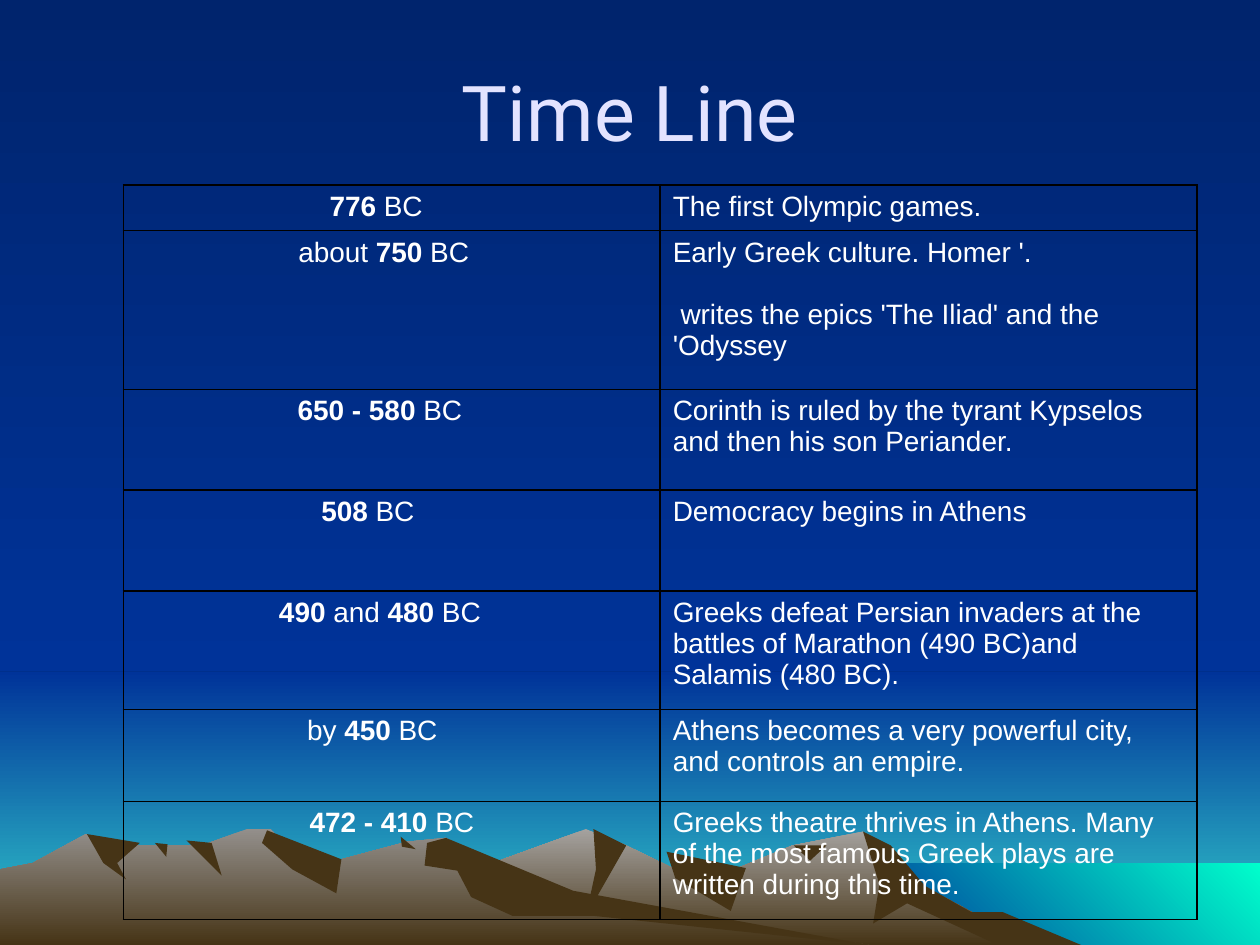
from typing import NamedTuple

from lxml.etree import SubElement
from pptx import Presentation
from pptx.dml.color import RGBColor
from pptx.enum.shapes import MSO_SHAPE as SHAPE
from pptx.enum.text import MSO_ANCHOR as ANCHOR, PP_ALIGN as ALIGN
from pptx.oxml.ns import qn
from pptx.util import Inches, Pt

NIGHT = RGBColor(0x00, 0x24, 0x6D)
BLUE = RGBColor(0x00, 0x33, 0x99)
TEAL = RGBColor(0x33, 0xCC, 0xCC)
AQUA = RGBColor(0x00, 0xFF, 0xCC)
STONE = RGBColor(0xA5, 0xA2, 0x9F)
GRAY = RGBColor(0x93, 0x8F, 0x8B)
BROWN = RGBColor(0x46, 0x34, 0x16)
LAVENDER = RGBColor(0xE3, 0xE3, 0xFF)
WHITE = RGBColor(0xFF, 0xFF, 0xFF)
BLACK = RGBColor(0x00, 0x00, 0x00)
DOWN, UP_RIGHT = 270, 45
HUNDREDTH = Inches(0.01)


class Band(NamedTuple):
    left: float
    top: float
    width: float
    height: float
    start: RGBColor
    end: RGBColor
    angle: int = DOWN


class Ridge(NamedTuple):
    points: list
    top_color: RGBColor = BROWN


class Event(NamedTuple):
    height: float
    date: list
    paragraphs: list
    shift: float = 0


BANDS = [
    Band(0, 5.33, 10, 2.17, BLUE, TEAL),
    Band(0, 0, 10, 5.33, NIGHT, BLUE),
    Band(6.83, 6.85, 3.17, 0.65, BLUE, AQUA, UP_RIGHT),
]

RIDGES = [
    Ridge([(258, 750), (355, 698), (465, 658), (497, 671), (536, 690), (566, 697),
           (629, 671), (685, 660), (723, 698), (820, 750)], STONE),
    Ridge([(685, 660), (698, 702), (693, 733), (720, 717), (792, 750), (858, 750),
           (796, 724), (771, 724), (734, 703), (707, 671)]),
    Ridge([(471, 658), (473, 690), (465, 727), (497, 671)]),
    Ridge([(529, 676), (536, 697), (580, 723), (592, 689)]),
    Ridge([(630, 671), (643, 683), (656, 671)]),
    Ridge([(0, 750), (0, 690), (26, 685), (68, 662), (94, 671), (160, 671), (196, 658),
           (215, 658), (236, 681), (271, 682), (323, 668), (354, 665), (432, 712),
           (690, 750)], GRAY),
    Ridge([(212, 659), (208, 669), (232, 690), (267, 709), (271, 682)]),
    Ridge([(354, 665), (339, 669), (337, 687), (363, 691), (374, 712), (407, 727),
           (472, 727), (690, 750), (455, 707)]),
    Ridge([(318, 664), (319, 672), (330, 674)]),
    Ridge([(148, 667), (176, 695), (168, 669)]),
    Ridge([(123, 669), (132, 680), (133, 670)]),
    Ridge([(69, 662), (82, 685), (100, 698), (93, 685), (111, 669)]),
]

EVENTS = [
    Event(0.36, [("776", True), (" BC", False)], ["The first Olympic games."], 0.25),
    Event(1.26, [("about ", False), ("750", True), (" BC", False)],
          ["Early Greek culture. Homer '.",
           " writes the epics 'The Iliad' and the 'Odyssey"], 0.13),
    Event(0.8, [("650 - 580", True), (" BC", False)],
          ["Corinth is ruled by the tyrant Kypselos and then his son Periander."], 0.19),
    Event(0.8, [("508", True), (" BC", False)], ["Democracy begins in Athens"], 0.38),
    Event(0.94, [("490", True), (" and ", False), ("480", True), (" BC", False)],
          ["Greeks defeat Persian invaders at the battles of Marathon (490 BC)and "
           "Salamis (480 BC)."], 0.19),
    Event(0.73, [("by ", False), ("450", True), (" BC", False)],
          ["Athens becomes a very powerful city, and controls an empire."], 0.31),
    Event(0.94, [("472 - 410", True), (" BC", False)],
          ["Greeks theatre thrives in Athens. Many of the most famous Greek plays are "
           "written during this time."]),
]


def set_gradient(fill, start: RGBColor, end: RGBColor, angle: int = DOWN) -> None:
    fill.gradient()
    fill.gradient_angle = angle
    for stop, color in zip(fill.gradient_stops, (start, end)):
        stop.color.rgb = color


def draw_band(s, band: Band) -> None:
    sp = s.shapes.add_shape(SHAPE.RECTANGLE, *(Inches(v) for v in band[:4]))
    sp.shadow.inherit = False
    sp.line.fill.background()
    set_gradient(sp.fill, band.start, band.end, band.angle)


def draw_ridge(s, ridge: Ridge) -> None:
    builder = s.shapes.build_freeform(*ridge.points[0], scale=HUNDREDTH)
    builder.add_line_segments(ridge.points[1:], close=True)
    sp = builder.convert_to_shape()
    sp.shadow.inherit = False
    sp.line.fill.background()
    if ridge.top_color == BROWN:
        sp.fill.solid()
        sp.fill.fore_color.rgb = BROWN
    else:
        set_gradient(sp.fill, ridge.top_color, BROWN)


def add_run(p, text: str, *, font: str = "Arial", size: int = 16,
            color: RGBColor = WHITE, bold: bool = False) -> None:
    r = p.add_run()
    r.text = text
    r.font.name = font
    r.font.size = Pt(size)
    r.font.color.rgb = color
    r.font.bold = bold


def format_cell(cell) -> None:
    tc_pr = cell._tc.get_or_add_tcPr()
    for side in ("a:lnL", "a:lnR", "a:lnT", "a:lnB"):
        ln = SubElement(tc_pr, qn(side), w=str(Pt(1)))
        fill = SubElement(ln, qn("a:solidFill"))
        SubElement(fill, qn("a:srgbClr"), val=str(BLACK))
    cell.fill.background()


def draw_timeline(s, events: list) -> None:
    height = sum(event.height for event in events)
    table = s.shapes.add_table(len(events), 2, Inches(0.98), Inches(1.47),
                               Inches(8.52), Inches(height)).table
    table.first_row = False
    table.horz_banding = False
    for row, event in zip(table.rows, events):
        row.height = Inches(event.height)
        date, story = row.cells
        format_cell(date)
        format_cell(story)
        date.margin_right = Inches(0.1 + event.shift)
        p = date.text_frame.paragraphs[0]
        p.alignment = ALIGN.CENTER
        for text, bold in event.date:
            add_run(p, text, bold=bold)
        tf = story.text_frame
        for i, text in enumerate(event.paragraphs):
            p = tf.add_paragraph() if i else tf.paragraphs[0]
            if i:
                p.space_before = Pt(18)
            add_run(p, text)


def draw_title(s, text: str) -> None:
    title = s.shapes.title
    title.element.getparent().append(title.element)
    title.left, title.top = Inches(0.5), Inches(0.25)
    title.width, title.height = Inches(9), Inches(1.25)
    tf = title.text_frame
    tf.vertical_anchor = ANCHOR.MIDDLE
    p = tf.paragraphs[0]
    p.alignment = ALIGN.CENTER
    add_run(p, text, font="Roboto", size=44, color=LAVENDER)


def main() -> None:
    prs = Presentation()
    prs.slide_width, prs.slide_height = Inches(10), Inches(7.5)
    s = prs.slides.add_slide(prs.slide_layouts[5])
    set_gradient(s.background.fill, NIGHT, BLUE)
    for band in BANDS:
        draw_band(s, band)
    for ridge in RIDGES:
        draw_ridge(s, ridge)
    draw_title(s, "Time Line")
    draw_timeline(s, EVENTS)
    prs.save("out.pptx")


if __name__ == "__main__":
    main()
